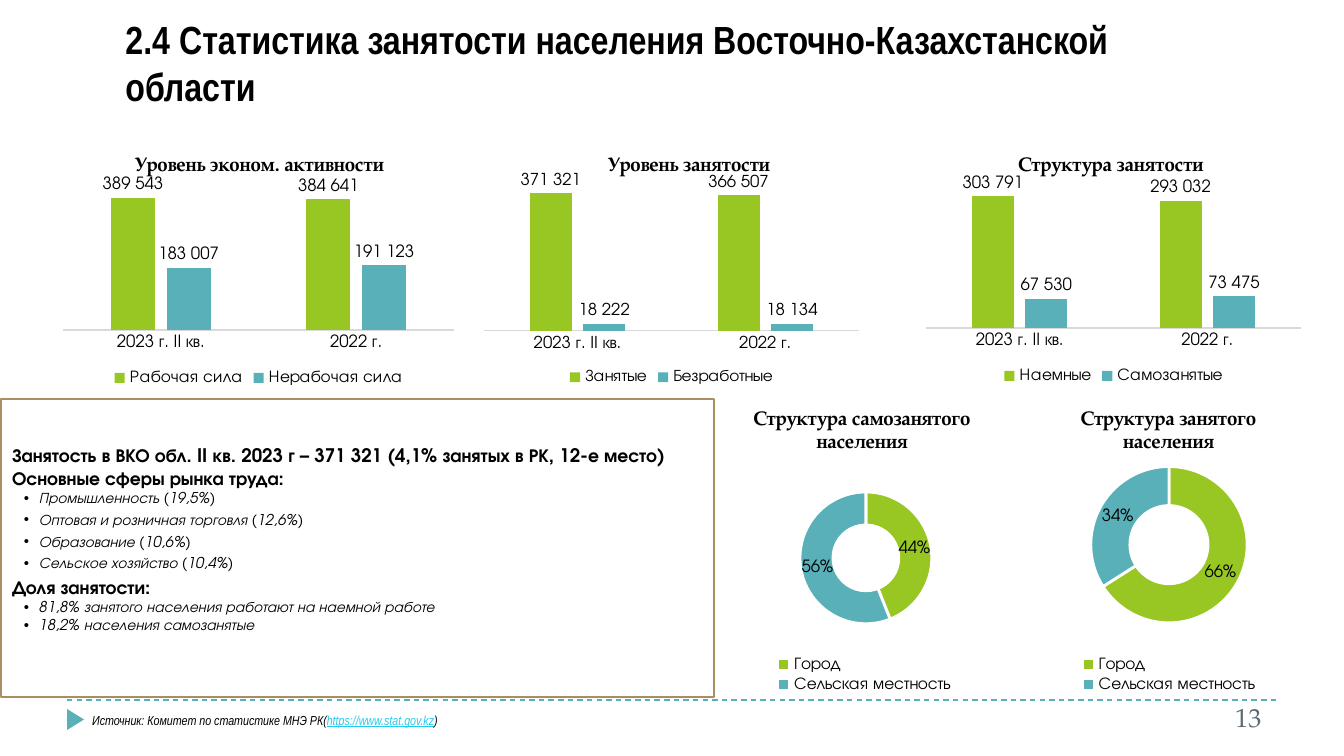
from lxml.etree import SubElement
from pptx import Presentation
from pptx.chart.data import CategoryChartData
from pptx.dml.color import RGBColor
from pptx.enum.chart import XL_CHART_TYPE, XL_LABEL_POSITION, XL_LEGEND_POSITION, XL_TICK_MARK
from pptx.enum.dml import MSO_LINE
from pptx.enum.shapes import MSO_CONNECTOR, MSO_SHAPE
from pptx.enum.text import MSO_ANCHOR, MSO_AUTO_SIZE, PP_ALIGN
from pptx.oxml.ns import qn
from pptx.util import Pt

PX = 6804
GREEN, TEAL, BLACK, WHITE = "98C723", "59B0B9", "000000", "FFFFFF"
SANS, SERIF, NARROW = "TeX Gyre Adventor", "TeX Gyre Pagella", "Arial Narrow"


def hex_color(value):
    return RGBColor.from_string(value)


def format_font(font, values):
    for name, value in values.items():
        if name == "color":
            font.color.rgb = hex_color(value)
        else:
            setattr(font, name, value)


title_format = {"name": NARROW, "size": Pt(21), "bold": True, "color": BLACK}
heading_format = {"name": SERIF, "size": Pt(10.5), "bold": True, "color": BLACK}
number_format = {"name": SERIF, "size": Pt(14), "color": "5B6973"}
source_format = {"name": NARROW, "size": Pt(7), "italic": True, "color": BLACK}
address_format = {**source_format, "color": "26CBEC", "underline": True}
lead_format = {"name": SANS, "size": Pt(10), "bold": True, "color": BLACK}
item_format = {"name": SANS, "size": Pt(8), "italic": True, "color": BLACK}
chart_format = {"name": SANS, "size": Pt(9), "color": BLACK}

presentation = Presentation()
presentation.slide_width = 1344 * PX
presentation.slide_height = 756 * PX
slide = presentation.slides.add_slide(presentation.slide_layouts[1])
shapes = slide.shapes
title, summary = slide.placeholders

footer_line = shapes.add_connector(MSO_CONNECTOR.STRAIGHT, 67 * PX, 700 * PX, 1277 * PX, 700 * PX)
footer_line.line.color.rgb = hex_color(TEAL)
footer_line.line.width = Pt(0.75)
footer_line.line.dash_style = MSO_LINE.DASH
SubElement(footer_line.element.spPr, qn("a:effectLst"))

marker = shapes.add_shape(MSO_SHAPE.ISOSCELES_TRIANGLE, 65 * PX, 711 * PX, 21 * PX, 17 * PX)
marker.rotation = 90
marker.shadow.inherit = False
marker.fill.solid()
marker.fill.fore_color.rgb = hex_color(TEAL)
marker.line.fill.background()

for placeholder, (left, top, width, height) in [(title, (112, 24, 1037, 92)), (summary, (1, 399, 713, 298))]:
    placeholder.left, placeholder.top = left * PX, top * PX
    placeholder.width, placeholder.height = width * PX, height * PX
    placeholder.text_frame.auto_size = MSO_AUTO_SIZE.NONE

title.text_frame.vertical_anchor = MSO_ANCHOR.BOTTOM
paragraph = title.text_frame.paragraphs[0]
paragraph.alignment = PP_ALIGN.LEFT
run = paragraph.add_run()
run.text = "2.4 Статистика занятости населения Восточно-Казахстанской области"
format_font(run.font, title_format)

summary.fill.solid()
summary.fill.fore_color.rgb = hex_color(WHITE)
summary.line.color.rgb = hex_color("A98D63")
summary.line.width = Pt(1.5)
frame = summary.text_frame
frame.vertical_anchor = MSO_ANCHOR.MIDDLE
frame.margin_left = frame.margin_right = 11 * PX
frame.margin_top, frame.margin_bottom = 0, 18 * PX

summary_lines = [
    ("Занятость в ВКО обл. II кв. 2023 г – 371 321 (4,1% занятых в РК, 12-е место)", False, 0),
    ("Основные сферы рынка труда:", False, 0),
    ("Промышленность (19,5%)", True, 2),
    ("Оптовая и розничная торговля (12,6%)", True, 2),
    ("Образование (10,6%)", True, 2),
    ("Сельское хозяйство (10,4%)", True, 2),
    ("Доля занятости:", False, 0),
    ("81,8% занятого населения работают на наемной работе", True, 0),
    ("18,2% населения самозанятые", True, 0),
]
for index, (text, bulleted, space_after) in enumerate(summary_lines):
    paragraph = frame.add_paragraph() if index else frame.paragraphs[0]
    paragraph.space_before = Pt(0)
    paragraph.space_after = Pt(space_after)
    properties = paragraph._p.get_or_add_pPr()
    properties.set("marL", str(27 * PX if bulleted else 0))
    properties.set("indent", str(-15 * PX if bulleted else 0))
    if bulleted:
        SubElement(properties, qn("a:buFont"), typeface="Arial")
        SubElement(properties, qn("a:buChar"), char="•")
    else:
        SubElement(properties, qn("a:buNone"))
    run = paragraph.add_run()
    run.text = text
    format_font(run.font, item_format if bulleted else lead_format)

text_boxes = [
    ((101, 145, 317, 38), PP_ALIGN.CENTER, [("Уровень эконом. активности", heading_format)]),
    ((546, 145, 286, 38), PP_ALIGN.CENTER, [("Уровень занятости", heading_format)]),
    ((968, 145, 286, 38), PP_ALIGN.CENTER, [("Структура занятости", heading_format)]),
    ((1036, 399, 265, 60), PP_ALIGN.CENTER, [("Структура занятого населения", heading_format)]),
    ((722, 399, 280, 60), PP_ALIGN.CENTER, [("Структура самозанятого населения", heading_format)]),
    ((1222, 695, 63, 40), PP_ALIGN.LEFT, [("13", number_format)]),
    ((79, 706, 847, 30), PP_ALIGN.LEFT, [
        ("Источник: Комитет по статистике МНЭ РК(", source_format),
        ("https://www.stat.gov.kz", address_format),
        (")", source_format),
    ]),
]
for box, alignment, runs in text_boxes:
    text_box = shapes.add_textbox(*[value * PX for value in box])
    text_box.text_frame.word_wrap = True
    text_box.text_frame.auto_size = MSO_AUTO_SIZE.SHAPE_TO_FIT_TEXT
    paragraph = text_box.text_frame.paragraphs[0]
    paragraph.alignment = alignment
    for text, values in runs:
        run = paragraph.add_run()
        run.text = text
        format_font(run.font, values)

periods = ["2023 г. II кв.", "2022 г."]
places = ["Город", "Сельская местность"]
column, doughnut = XL_CHART_TYPE.COLUMN_CLUSTERED, XL_CHART_TYPE.DOUGHNUT
charts = [
    (column, (55, 173, 407, 218), periods,
     {"Рабочая сила": (389543, 384641), "Нерабочая сила": (183007, 191123)}, None),
    (column, (476, 173, 391, 217), periods,
     {"Занятые": (371321, 366507), "Безработные": (18222, 18134)}, None),
    (column, (918, 172, 391, 217), periods,
     {"Наемные": (303791, 293032), "Самозанятые": (67530, 73475)}, None),
    (doughnut, (718, 448, 293, 250), places, {"Самозанятое население": (44, 56)},
     {"x": 0.28, "y": 0.09, "w": 0.45, "h": 0.7}),
    (doughnut, (1015, 448, 308, 250), places, {"Занятое население": (66, 34)}, None),
]
for kind, box, categories, series_values, plot_layout in charts:
    data = CategoryChartData()
    data.categories = categories
    for name, values in series_values.items():
        data.add_series(name, values)
    chart = shapes.add_chart(kind, *[value * PX for value in box], data).chart
    chart.has_title = False
    format_font(chart.font, chart_format)
    chart.has_legend = True
    chart.legend.position = XL_LEGEND_POSITION.BOTTOM
    chart.legend.include_in_layout = False
    format_font(chart.legend.font, chart_format)
    plot = chart.plots[0]
    plot.has_data_labels = True
    labels = plot.data_labels
    format_font(labels.font, chart_format)
    labels.number_format_is_linked = False
    if kind == column:
        plot.vary_by_categories = False
        plot.gap_width, plot.overlap = 219, -27
        labels.show_value = True
        labels.number_format = "#\\ ##0"
        labels.position = XL_LABEL_POSITION.OUTSIDE_END
        chart.value_axis.visible = False
        chart.value_axis.has_major_gridlines = False
        chart.category_axis.major_tick_mark = XL_TICK_MARK.NONE
        chart.category_axis.format.line.color.rgb = hex_color("D9D9D9")
        chart.category_axis.format.line.width = Pt(0.75)
        colored_parts = plot.series
    else:
        plot.vary_by_categories = True
        labels.show_value = False
        labels.show_percentage = True
        labels.number_format = "0%"
        plot._element.find(qn("c:holeSize")).set("val", "35")
        colored_parts = [plot.series[0].points[index] for index in range(2)]
    for part, color in zip(colored_parts, (GREEN, TEAL)):
        part.format.fill.solid()
        part.format.fill.fore_color.rgb = hex_color(color)
        if kind == doughnut:
            part.format.line.color.rgb = hex_color(WHITE)
            part.format.line.width = Pt(1.5)
    if plot_layout:
        plot_area = chart._chartSpace.chart.plotArea
        layout = plot_area.find(qn("c:layout"))
        if layout is None:
            layout = SubElement(plot_area, qn("c:layout"))
            plot_area.insert(0, layout)
        manual = SubElement(layout, qn("c:manualLayout"))
        settings = {"layoutTarget": "inner", "xMode": "edge", "yMode": "edge", **plot_layout}
        for name, value in settings.items():
            SubElement(manual, qn(f"c:{name}"), val=str(value))

presentation.save("out.pptx")
